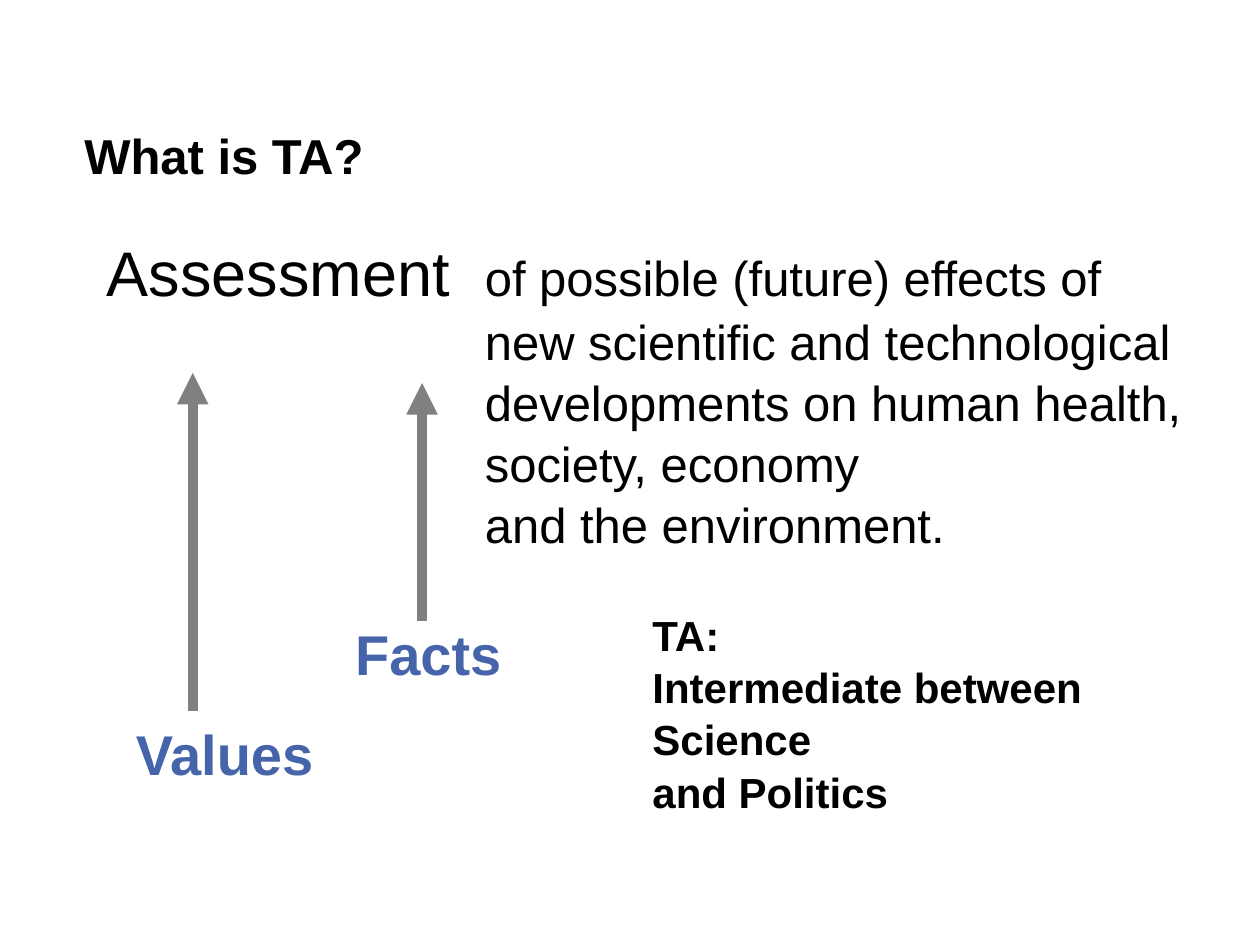
import pptx
import pptx.dml.color
import pptx.enum.shapes
import pptx.enum.text
import pptx.oxml
import pptx.oxml.ns
import pptx.util
from pptx.util import Inches

BLACK, BLUE, GREY = "000000", "4664AA", "808080"
TITLE = ("What is TA?", (0.67, 0.76, 9, 0.7))
LABELS = [
    ("Facts", (2.72, 4.85, 1.48, 0.63)),
    ("Values", (0.98, 5.64, 1.63, 0.63)),
]
ARROWS = [(3.35, 4.93, 3.04), (1.53, 5.64, 2.96)]
TERM = "Assessment\t"
DEFINITION = [
    "of possible (future) effects of ",
    "new scientific and technological ",
    "developments on human health, ",
    "society, economy ",
    "and the environment.",
]
ROLE = ["TA: ", "Intermediate between Science ", "and Politics"]


def rgb(value):
    return pptx.dml.color.RGBColor.from_string(value)


def add_text(s, box, size, lines=(), color=BLACK, bold=False, wrap=True):
    tf = s.shapes.add_textbox(*map(Inches, box)).text_frame
    tf.word_wrap = wrap
    p = tf.paragraphs[0]
    p.text = "\v".join(lines)
    p.line_spacing = 1.04
    p.font.name = "Arial"
    p.font.size = pptx.util.Pt(size)
    p.font.bold = bold
    p.font.color.rgb = rgb(color)
    return tf


def add_arrow(s, x, bottom, top):
    line = s.shapes.add_connector(
        pptx.enum.shapes.MSO_CONNECTOR.STRAIGHT,
        Inches(x), Inches(bottom), Inches(x), Inches(top))
    line.line.color.rgb = rgb(GREY)
    line.line.width = pptx.util.Pt(6)
    ns = pptx.oxml.ns.nsdecls("a")
    line.line._get_or_add_ln().append(
        pptx.oxml.parse_xml(f'<a:tailEnd {ns} type="triangle"/>'))
    line._element.spPr.append(pptx.oxml.parse_xml(f"<a:effectLst {ns}/>"))


def add_definition(s):
    p = add_text(s, (0.75, 1.78, 8.86, 3.04), 28).paragraphs[0]
    pPr = p._p.get_or_add_pPr()
    pPr.set("marL", str(Inches(3)))
    pPr.set("indent", str(Inches(-3)))
    r = p.add_run()
    r.text = TERM
    r.font.size = pptx.util.Pt(36)
    for i, text in enumerate(DEFINITION):
        if i:
            p.add_line_break()
        p.add_run().text = text


def main():
    prs = pptx.Presentation()
    prs.slide_width, prs.slide_height = Inches(10), Inches(7.5)
    s = prs.slides.add_slide(prs.slide_layouts[6])

    text, box = TITLE
    tf = add_text(s, box, 28, [text], bold=True)
    tf.margin_left = tf.margin_right = tf.margin_top = tf.margin_bottom = 0
    tf.vertical_anchor = pptx.enum.text.MSO_ANCHOR.BOTTOM

    for text, box in LABELS:
        add_text(s, box, 32, [text], BLUE, bold=True, wrap=False)
    for arrow in ARROWS:
        add_arrow(s, *arrow)
    add_definition(s)
    add_text(s, (5.08, 4.77, 4.25, 1.7), 24, ROLE, bold=True)
    prs.save("out.pptx")


if __name__ == "__main__":
    main()
